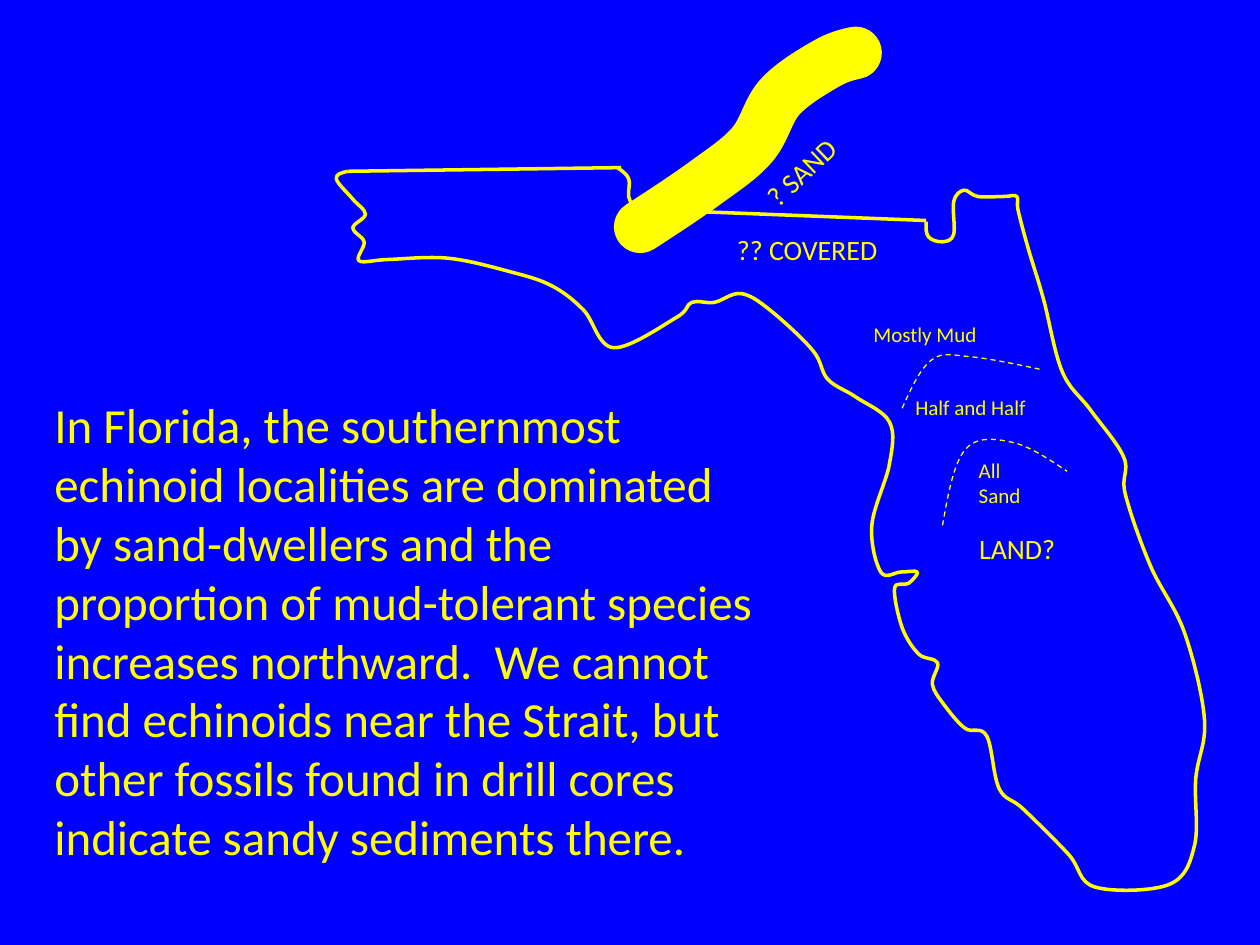
from dataclasses import dataclass

from lxml import etree
from pptx import Presentation, util as u
from pptx.dml.color import RGBColor
from pptx.enum import dml, shapes, text
from pptx.oxml import ns

COLORS = {"sea": "0000FF", "ink": "FFFF00"}
FONT = "Calibri"

Point = tuple[float, float]


@dataclass
class Curve:
    points: list[Point]
    width: float = 2
    dashed: bool = False
    round_cap: bool = False


@dataclass
class Label:
    text: str
    left: float
    top: float
    width: float
    height: float
    size: float = 16
    rotation: float = 0


# All positions are in points
BORDERS = [((198.7, 97.9), (355, 95.8)), ((362.2, 119.5), (529.2, 126))]

COAST = Curve([
    # Western end and panhandle
    (198.7, 97.9), (192.2, 102.2), (201.6, 113.8), (208.8, 122.4), (201.6, 130.3),
    (208.1, 138.2), (205.2, 149), (221.8, 148.3), (256.3, 147.6), (292.3, 155.5),
    (315.4, 163.4), (333.4, 177.1), (350.6, 198.7), (386.6, 181.4), (395.3, 172.8),
    (408.2, 172.8), (423.4, 167.8), (439.9, 177.1), (464.4, 200.2), (473, 216.7),
    # Gulf coast
    (488.9, 226.8), (508.3, 241.2), (508.3, 265), (498.2, 300.2), (503.3, 326.9),
    (514.8, 326.9), (524.2, 326.9), (519.1, 333.4), (511.2, 336.2), (515.5, 358.6),
    (524.9, 373.7), (535.7, 378.7), (532.8, 391), (539.3, 402.5), (551.5, 416.2),
    (563.8, 420.5), (571, 450.7), (584.6, 462.2), (610.6, 488.2), (625.7, 506.9),
    # Atlantic coast
    (668.2, 505.4), (682.6, 483.1), (683.3, 445), (688.3, 411.1), (676.8, 361.4),
    (657.4, 323.3), (643, 282.2), (642.2, 261.4), (623.5, 234.7), (607, 212.4),
    (596.2, 170.6), (587.5, 141.8), (581.8, 120.2), (581, 112.3), (573.8, 112.3),
    # North-eastern corner
    (558.7, 112.3), (550.8, 108.7), (545, 115.2), (545, 133.9), (538.6, 138.2),
    (530.6, 135.4), (529.2, 126.7),
])
BORDER_STEP = Curve([(352.8, 95.8), (359.3, 102.2), (359.3, 112.3), (362.9, 119.5)])
SAND_LIMIT = Curve([(538.6, 300.2), (551.5, 257), (578.2, 252.7), (609.8, 269.3)],
                   width=0.75, dashed=True)
MUD_LIMIT = Curve([(515.5, 233.3), (532.1, 205.9), (553.7, 203.8), (594, 211)],
                  width=0.75, dashed=True)
STRAIT = Curve([(365.8, 129.6), (403.2, 104.4), (429.8, 82.8), (445.7, 55.4),
                (471.6, 36.7), (488.9, 30.2)], width=30, round_cap=True)

MAP_LABELS = [
    Label("?? COVERED", 414, 129.6, 147.6, 40.3),
    Label("All\nSand", 552.2, 257.8, 59, 36, size=12),
    Label("Half and Half", 516, 221.8, 120.2, 32.4, size=12),
    Label("Mostly Mud", 492, 180, 120.2, 32.4, size=12),
]
LAND_LABEL = Label("LAND?", 552.4, 300.2, 90, 40.3)
SLIDE_LABELS = [
    Label("In Florida, the southernmost echinoid localities are dominated by "
          "sand-dwellers and the proportion of mud-tolerant species increases "
          "northward.  We cannot find echinoids near the Strait, but other fossils "
          "found in drill cores indicate sandy sediments there.",
          24, 222, 419.8, 278.6, size=28),
    Label("? SAND", 425.5, 81.4, 72, 26.6, rotation=316.3),
]


def color(name: str) -> RGBColor:
    return RGBColor.from_string(COLORS[name])


def curve_segments(points: list[Point]) -> list[Point]:
    """Give two control points and an end for each segment of a smooth curve."""
    last = len(points) - 1
    tangents = [
        tuple((b - a) / 6 for a, b in zip(points[max(i - 1, 0)], points[min(i + 1, last)]))
        for i in range(last + 1)
    ]
    path = []
    for i in range(last):
        start, end = points[i], points[i + 1]
        first = tuple(p + d for p, d in zip(start, tangents[i]))
        second = tuple(p - d for p, d in zip(end, tangents[i + 1]))
        # The end segments bend evenly towards their inner control point
        if i == 0:
            first = tuple((p + c) / 2 for p, c in zip(start, second))
        if i == last - 1:
            second = tuple((p + c) / 2 for p, c in zip(end, first))
        path += [first, second, end]
    return path


def bend_lines(shape) -> None:
    """Turn every three straight pieces of the outline into one cubic curve."""
    outline = next(shape.element.iter(ns.qn("a:path")))
    lines = outline.findall(ns.qn("a:lnTo"))
    for i in range(0, len(lines), 3):
        cubic = etree.SubElement(outline, ns.qn("a:cubicBezTo"))
        for line in lines[i:i + 3]:
            cubic.append(line[0])
            outline.remove(line)


def draw_curve(parent, curve: Curve) -> None:
    start, *path = [(u.Pt(x), u.Pt(y))
                    for x, y in curve.points[:1] + curve_segments(curve.points)]
    builder = parent.build_freeform(*start)
    builder.add_line_segments(path, close=False)
    shape = builder.convert_to_shape()
    bend_lines(shape)
    shape.shadow.inherit = False
    shape.fill.background()
    shape.line.color.rgb = color("ink")
    shape.line.width = u.Pt(curve.width)
    if curve.dashed:
        shape.line.dash_style = dml.MSO_LINE.DASH
    if curve.round_cap:
        shape.element.spPr.find(ns.qn("a:ln")).set("cap", "rnd")


def draw_border(parent, start: Point, end: Point) -> None:
    line = parent.add_connector(shapes.MSO_CONNECTOR.STRAIGHT,
                                *(u.Pt(value) for value in start + end))
    line.line.color.rgb = color("ink")
    line.line.width = u.Pt(2)
    etree.SubElement(line.element.spPr, ns.qn("a:effectLst"))


def write(box, content: str, *, size: float, font: str = FONT, ink: str = "ink") -> None:
    frame = box.text_frame
    frame.word_wrap = True
    frame.auto_size = text.MSO_AUTO_SIZE.SHAPE_TO_FIT_TEXT
    for i, line in enumerate(content.split("\n")):
        para = frame.add_paragraph() if i else frame.paragraphs[0]
        span = para.add_run()
        span.text = line
        span.font.name = font
        span.font.size = u.Pt(size)
        span.font.color.rgb = color(ink)


def draw_label(parent, label: Label) -> None:
    box = parent.add_textbox(u.Pt(label.left), u.Pt(label.top),
                             u.Pt(label.width), u.Pt(label.height))
    box.rotation = label.rotation
    write(box, label.text, size=label.size)


def main() -> None:
    deck = Presentation()
    deck.slide_width, deck.slide_height = u.Pt(720), u.Pt(540)
    page = deck.slides.add_slide(deck.slide_layouts[6])
    page.background.fill.solid()
    page.background.fill.fore_color.rgb = color("sea")

    # Map with its sediment zones
    florida = page.shapes.add_group_shape().shapes
    for start, end in BORDERS:
        draw_border(florida, start, end)
    for curve in (COAST, BORDER_STEP):
        draw_curve(florida, curve)
    draw_label(florida, LAND_LABEL)
    for curve in (SAND_LIMIT, MUD_LIMIT):
        draw_curve(florida, curve)
    for label in MAP_LABELS:
        draw_label(florida, label)
    draw_curve(florida, STRAIT)

    # Explanation and the label along the strait
    for label in SLIDE_LABELS:
        draw_label(page.shapes, label)

    deck.save("out.pptx")


if __name__ == "__main__":
    main()
